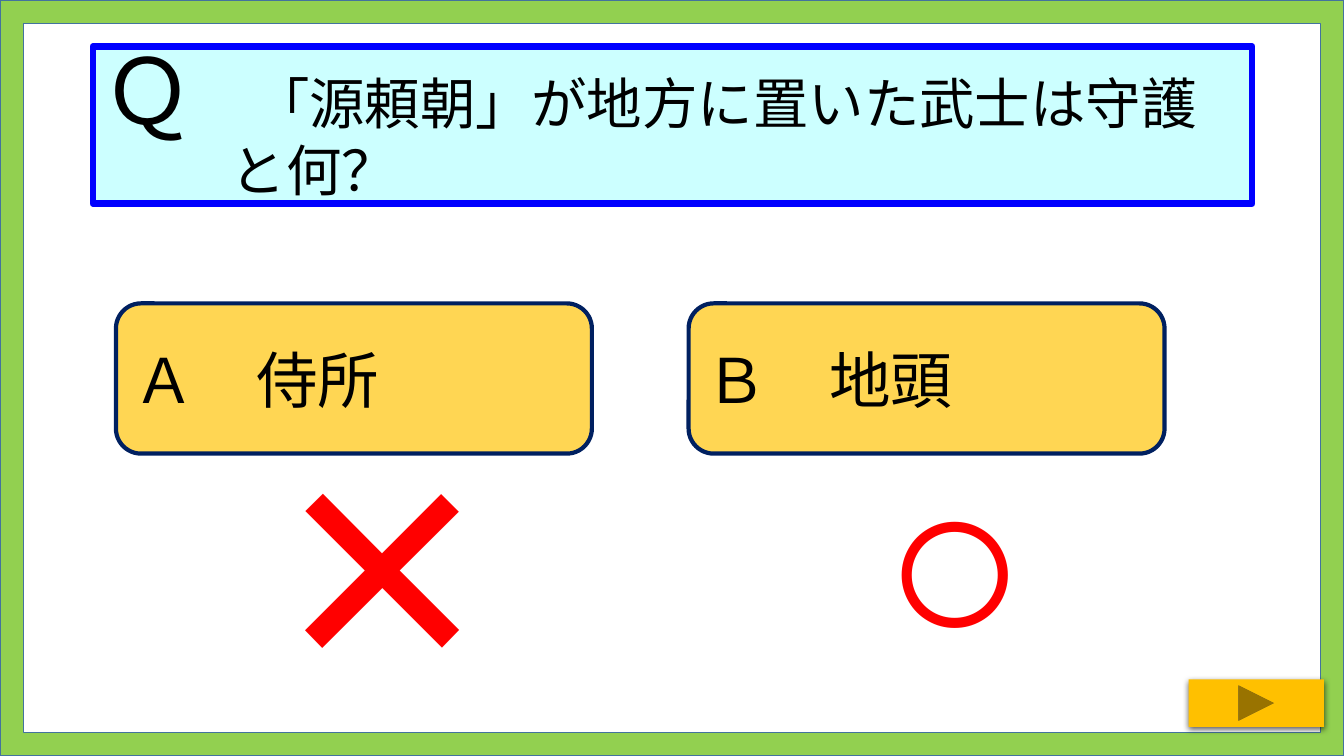
from dataclasses import dataclass

from lxml.etree import SubElement
from pptx import Presentation
from pptx.dml.color import RGBColor
from pptx.enum.shapes import MSO_SHAPE as Shape
from pptx.enum.text import MSO_ANCHOR as Anchor, MSO_AUTO_SIZE as Fit, PP_ALIGN as Align
from pptx.oxml.ns import qn
from pptx.util import Inches, Pt


@dataclass(frozen=True)
class Theme:
    """Colours, fonts and type sizes of the quiz."""
    ink: str = "000000"
    green: str = "92D050"
    edge: str = "43739E"
    sky: str = "CCFFFF"
    blue: str = "0000FF"
    gold: str = "FFD653"
    navy: str = "002060"
    red: str = "FF0000"
    amber: str = "FFC000"
    kanji: str = "Noto Sans CJK JP"
    latin: str = "Arial"
    letter: float = 64.8
    gap: float = 43.2
    ask: float = 39.6
    choice: float = 44
    ring: float = 172
    cross: float = 247


THEME = Theme()


def paint(shape, fill, line=None, width=1):
    """Fill a shape and draw or clear its outline."""
    shape.fill.solid()
    shape.fill.fore_color.rgb = RGBColor.from_string(fill)
    if line:
        shape.line.color.rgb = RGBColor.from_string(line)
        shape.line.width = Pt(width)
    else:
        shape.line.fill.background()


def style(run, size, face, color):
    """Set size, colour and both Latin and East Asian faces of a run."""
    font = run.font
    font.size, font.name = Pt(size), face
    font.color.rgb = RGBColor.from_string(color)
    SubElement(font._element, qn("a:ea"), typeface=face)


def hang(para, depth):
    """Align a paragraph left with a hanging indent in inches."""
    para.alignment = Align.LEFT
    props = para._p.get_or_add_pPr()
    props.set("marL", str(Inches(depth)))
    props.set("indent", str(Inches(-depth)))


def place(shape, box):
    """Move a shape to a box given in inches."""
    shape.left, shape.top, shape.width, shape.height = map(Inches, box)


def border(slide, box):
    """Draw the green frame round the slide."""
    frame = slide.shapes.add_shape(Shape.FRAME, *map(Inches, box))
    frame.adjustments[0] = 0.031
    frame.shadow.inherit = False
    paint(frame, THEME.green, THEME.edge)


def question(slide, box, parts):
    """Write the question in the title placeholder."""
    title = slide.shapes.title
    place(title, box)
    paint(title, THEME.sky, THEME.blue, 4.5)
    frame = title.text_frame
    frame.auto_size, frame.vertical_anchor = Fit.NONE, Anchor.MIDDLE
    para = frame.paragraphs[0]
    hang(para, 1.27)
    para.line_spacing = 0.9
    for text, size in parts:
        run = para.add_run()
        run.text = text
        style(run, size, THEME.kanji, THEME.ink)


def answer(slide, box, text):
    """Draw one rounded answer card."""
    card = slide.shapes.add_shape(Shape.ROUNDED_RECTANGLE, *map(Inches, box))
    card.shadow.inherit = False
    paint(card, THEME.gold, THEME.navy, 3)
    frame = card.text_frame
    frame.text = text
    frame.vertical_anchor = Anchor.MIDDLE
    para = frame.paragraphs[0]
    hang(para, 0.49)
    style(para.runs[0], THEME.choice, THEME.kanji, THEME.ink)


def mark(slide, box, sign, size):
    """Put a large red verdict sign in the middle of a box."""
    frame = slide.shapes.add_textbox(*map(Inches, box)).text_frame
    frame.text = sign
    frame.word_wrap = True
    frame.auto_size, frame.vertical_anchor = Fit.SHAPE_TO_FIT_TEXT, Anchor.MIDDLE
    para = frame.paragraphs[0]
    para.alignment = Align.CENTER
    style(para.runs[0], size, THEME.latin, THEME.red)


def forward(slide, box):
    """Draw the next button with its soft shadow."""
    button = slide.shapes.add_shape(Shape.ACTION_BUTTON_FORWARD_OR_NEXT, *map(Inches, box))
    button.shadow.inherit = False
    paint(button, THEME.amber)
    effect = button._element.spPr.find(qn("a:effectLst"))
    shade = SubElement(effect, qn("a:outerShdw"), blurRad=str(Pt(4.5)), dist=str(Pt(1.5)),
                       dir="5400000", algn="ctr", rotWithShape="0")
    color = SubElement(shade, qn("a:srgbClr"), val=THEME.ink)
    SubElement(color, qn("a:alpha"), val="63000")


def main():
    """Build the quiz slide and save it."""
    deck = Presentation()
    deck.slide_width, deck.slide_height = Inches(13.33), Inches(7.5)
    slide = deck.slides.add_slide(deck.slide_layouts[5])
    border(slide, (0, 0, 13.33, 7.5))
    question(slide, (0.92, 0.46, 11.5, 1.56), (
        ("Ｑ", THEME.letter),
        ("　", THEME.gap),
        ("「源頼朝」が地方に置いた武士は守護と何？", THEME.ask),
    ))
    for col, text in enumerate(("Ａ　侍所", "Ｂ　地頭")):
        answer(slide, (1.15 + 5.68 * col, 3.01, 4.72, 1.49), text)
    mark(slide, (8.09, 4.09, 2.76, 2.76), "○", THEME.ring)
    mark(slide, (2.41, 4.06, 2.76, 2.76), "×", THEME.cross)
    forward(slide, (11.79, 6.74, 1.34, 0.47))
    deck.save("out.pptx")


if __name__ == "__main__":
    main()
